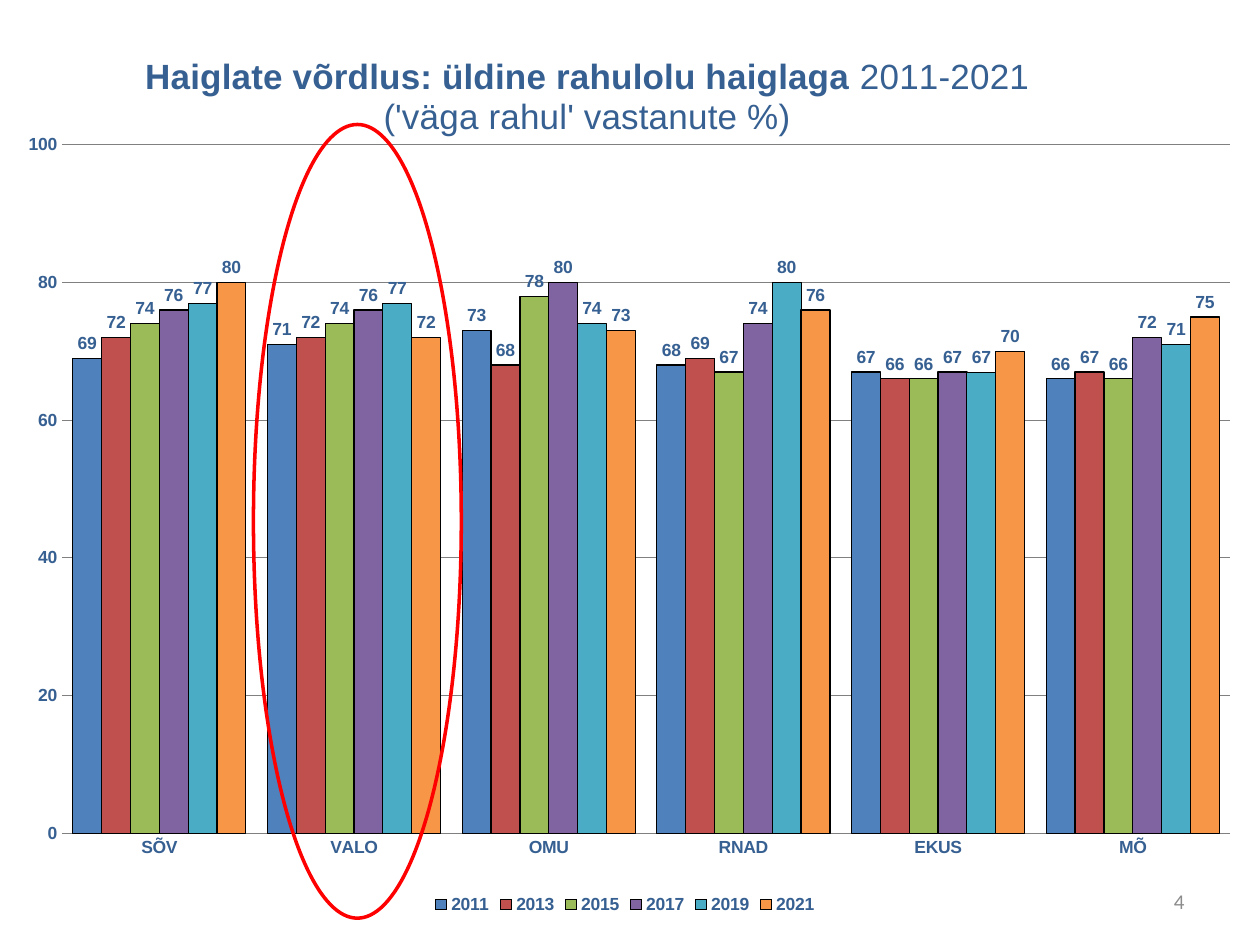
from lxml import etree
from pptx import Presentation
from pptx.chart.data import CategoryChartData
from pptx.dml.color import RGBColor
from pptx.enum.chart import XL_CHART_TYPE, XL_LABEL_POSITION, XL_LEGEND_POSITION, XL_TICK_MARK
from pptx.enum.shapes import MSO_SHAPE
from pptx.enum.text import MSO_ANCHOR, PP_ALIGN
from pptx.oxml.ns import qn
from pptx.util import Cm, Pt

CLUSTERED = XL_CHART_TYPE.COLUMN_CLUSTERED
OUTSIDE = XL_LABEL_POSITION.OUTSIDE_END
BOTTOM = XL_LEGEND_POSITION.BOTTOM
NO_TICK = XL_TICK_MARK.NONE
ELLIPSE = MSO_SHAPE.OVAL
MIDDLE = MSO_ANCHOR.MIDDLE
RIGHT = PP_ALIGN.RIGHT

COLORS = {
    "text": "376092", "number": "8C8C8C", "grid": "808080",
    "outline": "000000", "highlight": "FF0000",
    "2011": "4F81BD", "2013": "C0504D", "2015": "9BBB59",
    "2017": "8064A2", "2019": "4BACC6", "2021": "F79646",
}
TITLE = [
    [("Haiglate võrdlus: üldine rahulolu haiglaga", True), (" 2011-2021", False)],
    [("('väga rahul' vastanute %)", False)],
]
HOSPITALS = ["SÕV", "VALO", "OMU", "RNAD", "EKUS", "MÕ"]
SATISFACTION = {
    "2011": [69, 71, 73, 68, 67, 66],
    "2013": [72, 72, 68, 69, 66, 67],
    "2015": [74, 74, 78, 67, 66, 66],
    "2017": [76, 76, 80, 74, 67, 72],
    "2019": [77, 77, 74, 80, 67, 71],
    "2021": [80, 72, 73, 76, 70, 75],
}
PAGE_NUMBER = "4"


def rgb(name):
    return RGBColor.from_string(COLORS[name])


def style_font(font, size, color="text", bold=True, face="Arial"):
    font.name, font.size, font.bold = face, Pt(size), bold
    font.color.rgb = rgb(color)


def style_line(line, color, width):
    line.color.rgb = rgb(color)
    line.width = Pt(width)


def set_layout(parent, index, settings):
    for old in parent.findall(qn("c:layout")):
        parent.remove(old)
    layout = etree.Element(qn("c:layout"))
    manual = etree.SubElement(layout, qn("c:manualLayout"))
    for tag, value in settings.items():
        etree.SubElement(manual, qn(f"c:{tag}")).set("val", str(value))
    parent.insert(index, layout)


def add_title(chart):
    title = chart.chart_title
    frame = title.text_frame
    for number, runs in enumerate(TITLE):
        paragraph = frame.add_paragraph() if number else frame.paragraphs[0]
        for text, bold in runs:
            run = paragraph.add_run()
            run.text = text
            style_font(run.font, 20, bold=bold)
    set_layout(title._element, 1, {"xMode": "edge", "yMode": "edge", "x": 0.11, "y": 0})


def add_comparison(slide):
    data = CategoryChartData(number_format="0")
    data.categories = HOSPITALS
    for year, values in SATISFACTION.items():
        data.add_series(year, values)
    chart = slide.shapes.add_chart(
        CLUSTERED, Cm(0.1), Cm(1.05), Cm(25), Cm(17.48), data).chart
    style_font(chart.font, 10)
    add_title(chart)

    chart.has_legend = True
    chart.legend.position = BOTTOM
    chart.legend.include_in_layout = False

    hospitals, percent = chart.category_axis, chart.value_axis
    for axis in (hospitals, percent):
        axis.major_tick_mark = axis.minor_tick_mark = NO_TICK
    style_line(hospitals.format.line, "grid", 0.75)
    percent.minimum_scale, percent.maximum_scale, percent.major_unit = 0, 100, 20
    percent.tick_labels.number_format = "0"
    percent.tick_labels.number_format_is_linked = False
    percent.format.line.fill.background()
    style_line(percent.major_gridlines.format.line, "grid", 0.75)

    plot = chart.plots[0]
    plot.gap_width, plot.overlap, plot.vary_by_categories = 75, 0, False
    for series in plot.series:
        series.format.fill.solid()
        series.format.fill.fore_color.rgb = rgb(series.name)
        style_line(series.format.line, "outline", 0.5 if series.name == "2019" else 0.75)
        labels = series.data_labels
        labels.show_value = True
        labels.number_format, labels.number_format_is_linked = "0", False
        labels.position = OUTSIDE
        style_font(labels.font, 10)
    set_layout(chart._chartSpace.chart.plotArea, 0, {
        "layoutTarget": "inner", "xMode": "edge", "yMode": "edge",
        "x": 0.046, "y": 0.107, "w": 0.942, "h": 0.794})


def add_highlight(slide):
    ring = slide.shapes.add_shape(ELLIPSE, Cm(5.11), Cm(2.51), Cm(4.19), Cm(16))
    ring.shadow.inherit = False
    ring.fill.background()
    style_line(ring.line, "highlight", 2)


def add_page_number(slide):
    frame = slide.shapes.add_textbox(Cm(18.21), Cm(17.65), Cm(5.92), Cm(1.02)).text_frame
    frame.word_wrap = True
    frame.vertical_anchor = MIDDLE
    paragraph = frame.paragraphs[0]
    paragraph.text = PAGE_NUMBER
    paragraph.alignment = RIGHT
    style_font(paragraph.font, 12, "number", False, "Calibri")


def main():
    deck = Presentation()
    deck.slide_width, deck.slide_height = Cm(25.4), Cm(19.05)
    slide = deck.slides.add_slide(deck.slide_layouts[6])
    add_page_number(slide)
    add_comparison(slide)
    add_highlight(slide)
    deck.save("out.pptx")


if __name__ == "__main__":
    main()
